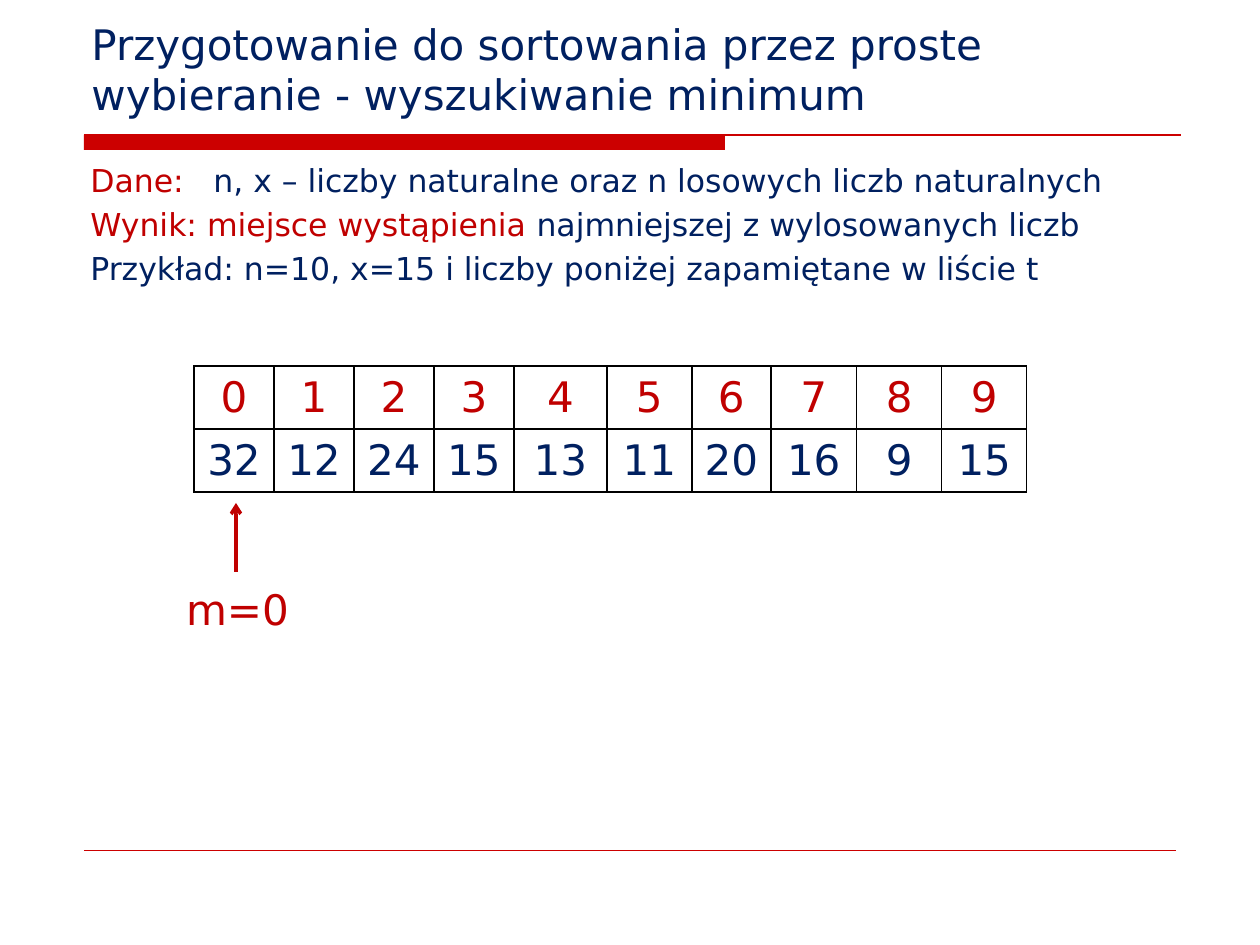
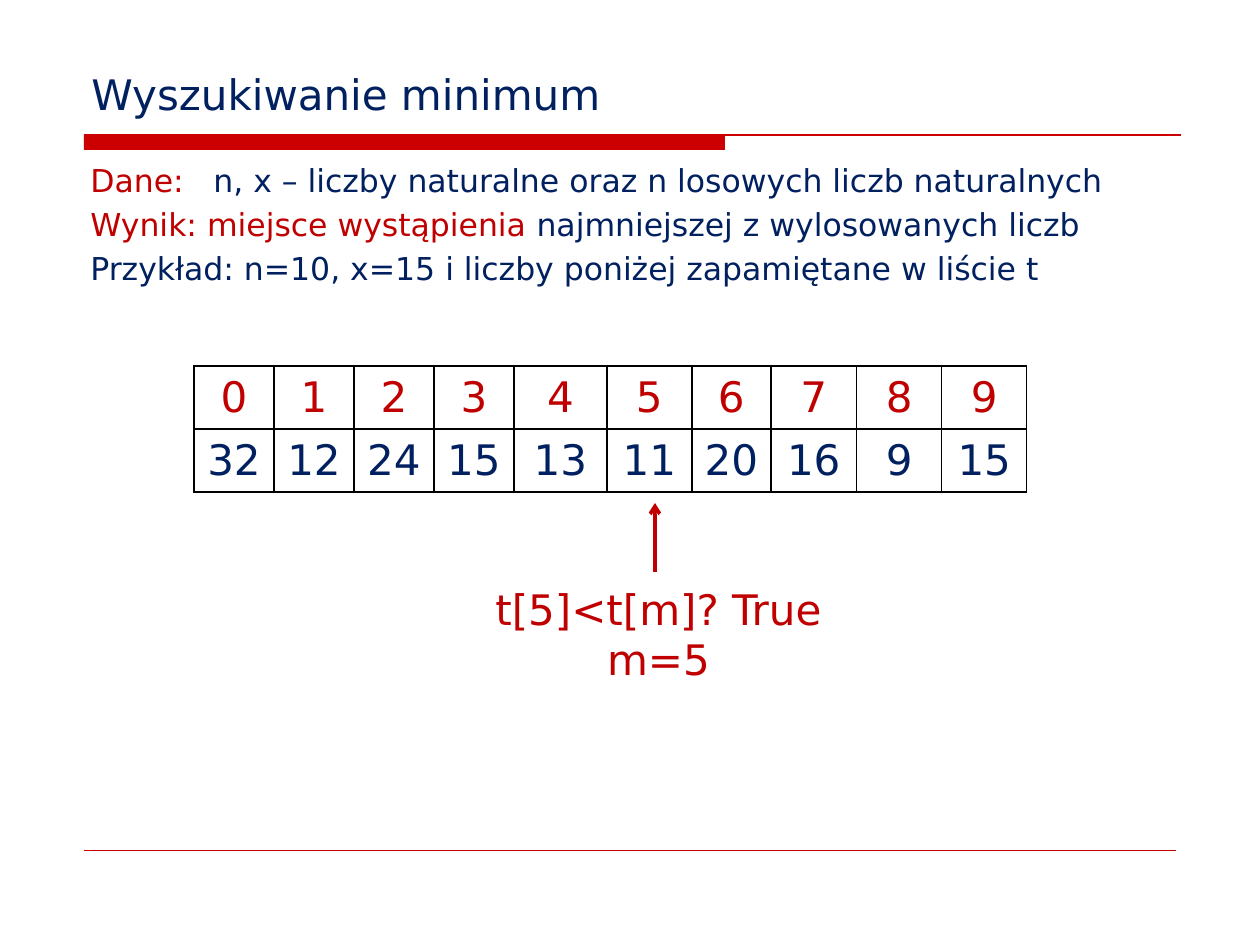
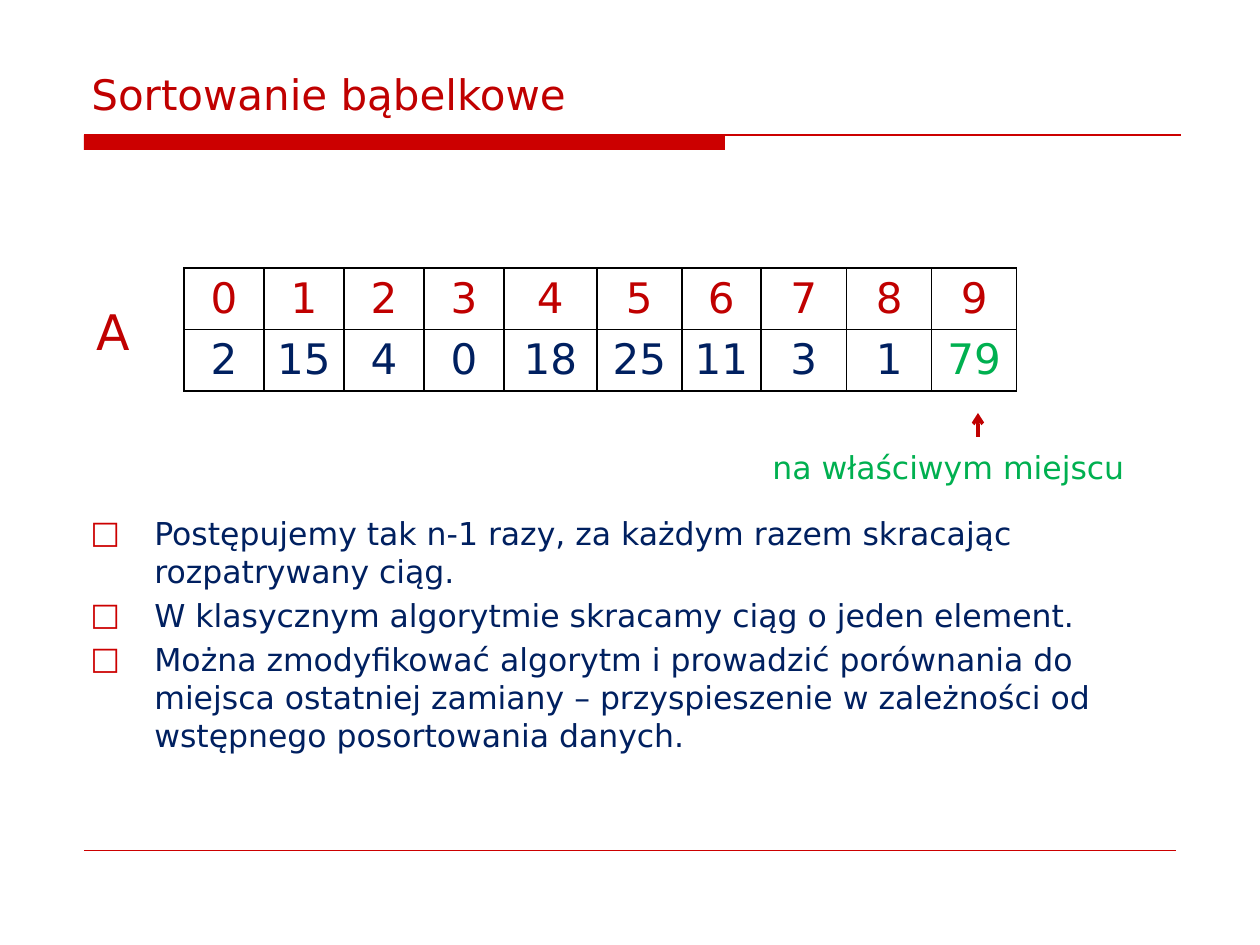
"""Build three slides on searching for a minimum and on bubble sort."""
from dataclasses import dataclass
from typing import NamedTuple

from lxml.etree import SubElement
from pptx import Presentation
from pptx.dml.color import RGBColor
from pptx.enum.shapes import MSO_CONNECTOR, MSO_SHAPE
from pptx.enum.text import MSO_ANCHOR, PP_ALIGN
from pptx.oxml.ns import qn
from pptx.util import Emu, Pt


@dataclass(frozen=True)
class Theme:
    """Colours, font and type sizes of the deck."""

    font: str = "DejaVu Sans"
    navy: str = "002060"
    red: str = "C00000"
    band: str = "CC0000"
    green: str = "00B050"
    grid: str = "000000"
    body: int = 18
    heading: int = 24
    name: int = 28
    paragraph_gap: float = 3.6


class Box(NamedTuple):
    """A region of a slide in px."""

    left: int
    top: int
    width: int
    height: int


THEME = Theme()
SLIDE = Box(0, 0, 1260, 945)
TITLE = Box(79, 42, 1103, 83)
BAND = Box(84, 135, 1097, 15)
FOOTER = Box(84, 850, 1092, 0)
TASK = Box(78, 155, 1103, 234)
SEARCH_LIST = Box(194, 366, 833, 126)
SORT_LIST = Box(184, 268, 833, 123)
BULLETS = Box(78, 508, 1103, 330)
COLUMN_WIDTHS = (80, 80, 80, 80, 93, 85, 79, 86, 85, 85)
SEARCH_VALUES = (32, 12, 24, 15, 13, 11, 20, 16, 9, 15)
SORT_VALUES = (2, 15, 4, 0, 18, 25, 11, 3, 1, 79)
TASK_LINES = (
    (("Dane:\t", THEME.red),
     ("n, x – liczby naturalne oraz n losowych liczb naturalnych", THEME.navy)),
    (("Wynik: miejsce wystąpienia ", THEME.red),
     ("najmniejszej z wylosowanych liczb", THEME.navy)),
    (("Przykład: n=10, x=15 i liczby poniżej zapamiętane w liście t", THEME.navy),),
)
SORT_NOTES = (
    "Postępujemy tak n-1 razy, za każdym razem skracając rozpatrywany ciąg.",
    "W klasycznym algorytmie skracamy ciąg o jeden element.",
    "Można zmodyfikować algorytm i prowadzić porównania do miejsca ostatniej zamiany"
    " – przyspieszenie w zależności od wstępnego posortowania danych.",
)


def px(length):
    """Turn px into EMU."""
    return Emu(round(length * 914400 / SLIDE.width * 10))


def place(box):
    """Give the four EMU lengths of a box."""
    return [px(length) for length in box]


def style(run, size, color):
    """Set the font, size and colour of a run."""
    run.font.name = THEME.font
    run.font.size = Pt(size)
    run.font.color.rgb = RGBColor.from_string(color)


def add_text(slide, box, text, size, color, align=PP_ALIGN.LEFT, wrap=False):
    """Add a text box in one style and return its frame."""
    frame = slide.shapes.add_textbox(*place(box)).text_frame
    frame.word_wrap = wrap
    frame.text = text
    for paragraph in frame.paragraphs:
        paragraph.alignment = align
        for run in paragraph.runs:
            style(run, size, color)
    return frame


def add_line(slide, start, end, color, width):
    """Add a straight line without a shadow."""
    line = slide.shapes.add_connector(
        MSO_CONNECTOR.STRAIGHT, *place(start), *place(end))
    line.line.color.rgb = RGBColor.from_string(color)
    line.line.width = Pt(width)
    SubElement(line._element.spPr, qn("a:effectLst"))
    return line


def add_arrow(slide, x, top, length):
    """Add an arrow that points up to the given top."""
    arrow = add_line(slide, (x, top + length), (x, top), THEME.red, 2)
    SubElement(arrow.line._get_or_add_ln(), qn("a:tailEnd"), type="arrow")


def add_band(slide, box):
    """Add the thick bar and the thin rule under the title."""
    bar = slide.shapes.add_shape(
        MSO_SHAPE.RECTANGLE, *place(box._replace(width=641)))
    bar.shadow.inherit = False
    bar.fill.solid()
    bar.fill.fore_color.rgb = RGBColor.from_string(THEME.band)
    bar.line.fill.background()
    add_line(slide, box[:2], (box.left + box.width, box.top), THEME.band, 0.75)


def add_base(presentation, title, color):
    """Add a slide with its title, band and footer rule."""
    slide = presentation.slides.add_slide(presentation.slide_layouts[6])
    add_band(slide, BAND)
    add_line(slide, FOOTER[:2], (FOOTER.left + FOOTER.width, FOOTER.top),
             THEME.band, 0.25)
    frame = add_text(slide, TITLE, title, THEME.heading, color, wrap=True)
    frame.vertical_anchor = MSO_ANCHOR.BOTTOM
    return slide


def add_task(slide, box):
    """Add the input, result and example of the search."""
    frame = slide.shapes.add_textbox(*place(box)).text_frame
    frame.word_wrap = True
    for index, parts in enumerate(TASK_LINES):
        paragraph = frame.add_paragraph() if index else frame.paragraphs[0]
        paragraph.space_before = Pt(THEME.paragraph_gap)
        for text, color in parts:
            run = paragraph.add_run()
            run.text = text
            style(run, THEME.body, color)
    properties = frame.paragraphs[0]._p.get_or_add_pPr()
    tabs = SubElement(properties, qn("a:tabLst"))
    SubElement(tabs, qn("a:tab"), pos=str(px(123)), algn="l")


def add_borders(cell):
    """Draw the four borders of a cell."""
    properties = cell._tc.get_or_add_tcPr()
    for side in ("lnL", "lnR", "lnT", "lnB"):
        border = SubElement(properties, qn(f"a:{side}"), w=str(Pt(1)))
        fill = SubElement(border, qn("a:solidFill"))
        SubElement(fill, qn("a:srgbClr"), val=THEME.grid)


def fill_cell(cell, value, color):
    """Write a centred number in a bordered cell."""
    add_borders(cell)
    cell.fill.background()
    cell.vertical_anchor = MSO_ANCHOR.MIDDLE
    cell.margin_top = cell.margin_bottom = px(4)
    cell.text_frame.text = str(value)
    paragraph = cell.text_frame.paragraphs[0]
    paragraph.alignment = PP_ALIGN.CENTER
    style(paragraph.runs[0], THEME.heading, color)


def add_list_table(slide, box, values, placed=()):
    """Add a table of indexes and values, with placed indexes in green."""
    table = slide.shapes.add_table(2, len(values), *place(box)).table
    table.first_row = table.horz_banding = False
    for row in table.rows:
        row.height = px(box.height / 2)
    for index, (width, value) in enumerate(zip(COLUMN_WIDTHS, values)):
        table.columns[index].width = px(width)
        fill_cell(table.cell(0, index), index, THEME.red)
        color = THEME.green if index in placed else THEME.navy
        fill_cell(table.cell(1, index), value, color)


def add_bullets(slide, box, notes):
    """Add notes with square bullets and a hanging indent."""
    frame = add_text(slide, box, "\n".join(notes), THEME.body, THEME.navy, wrap=True)
    for paragraph in frame.paragraphs:
        paragraph.space_before = Pt(THEME.paragraph_gap)
        properties = paragraph._p.get_or_add_pPr()
        properties.set("marL", str(px(64)))
        properties.set("indent", str(-px(64)))
        color = SubElement(properties, qn("a:buClr"))
        SubElement(color, qn("a:srgbClr"), val=THEME.band)
        SubElement(properties, qn("a:buFont"), typeface=THEME.font)
        SubElement(properties, qn("a:buChar"), char="□")


def add_search_slide(presentation, title, arrow_x, label_box, label):
    """Add one step of the search for the minimum."""
    slide = add_base(presentation, title, THEME.navy)
    add_task(slide, TASK)
    add_list_table(slide, SEARCH_LIST, SEARCH_VALUES)
    add_arrow(slide, arrow_x, SEARCH_LIST.top + 137, 69)
    add_text(slide, label_box, label, THEME.heading, THEME.red, PP_ALIGN.CENTER)


def add_sort_slide(presentation):
    """Add the bubble sort slide."""
    slide = add_base(presentation, "Sortowanie bąbelkowe", THEME.red)
    left, top = SORT_LIST[:2]
    add_bullets(slide, BULLETS, SORT_NOTES)
    add_list_table(slide, SORT_LIST, SORT_VALUES, placed=(9,))
    add_text(slide, Box(left - 100, top + 27, 59, 72), "A", THEME.name, THEME.red)
    add_text(slide, Box(left + 576, top + 174, 382, 50), "na właściwym miejscu",
             THEME.body, THEME.green)
    add_arrow(slide, left + 794, top + 145, 24)


def main():
    """Build and save the presentation."""
    presentation = Presentation()
    presentation.slide_width = px(SLIDE.width)
    presentation.slide_height = px(SLIDE.height)
    add_search_slide(
        presentation,
        "Przygotowanie do sortowania przez proste wybieranie - wyszukiwanie minimum",
        236, Box(173, 577, 129, 63), "m=0")
    add_search_slide(presentation, "Wyszukiwanie minimum",
                     655, Box(474, 577, 369, 115), "t[5]<t[m]? True\nm=5")
    add_sort_slide(presentation)
    presentation.save("out.pptx")


if __name__ == "__main__":
    main()
